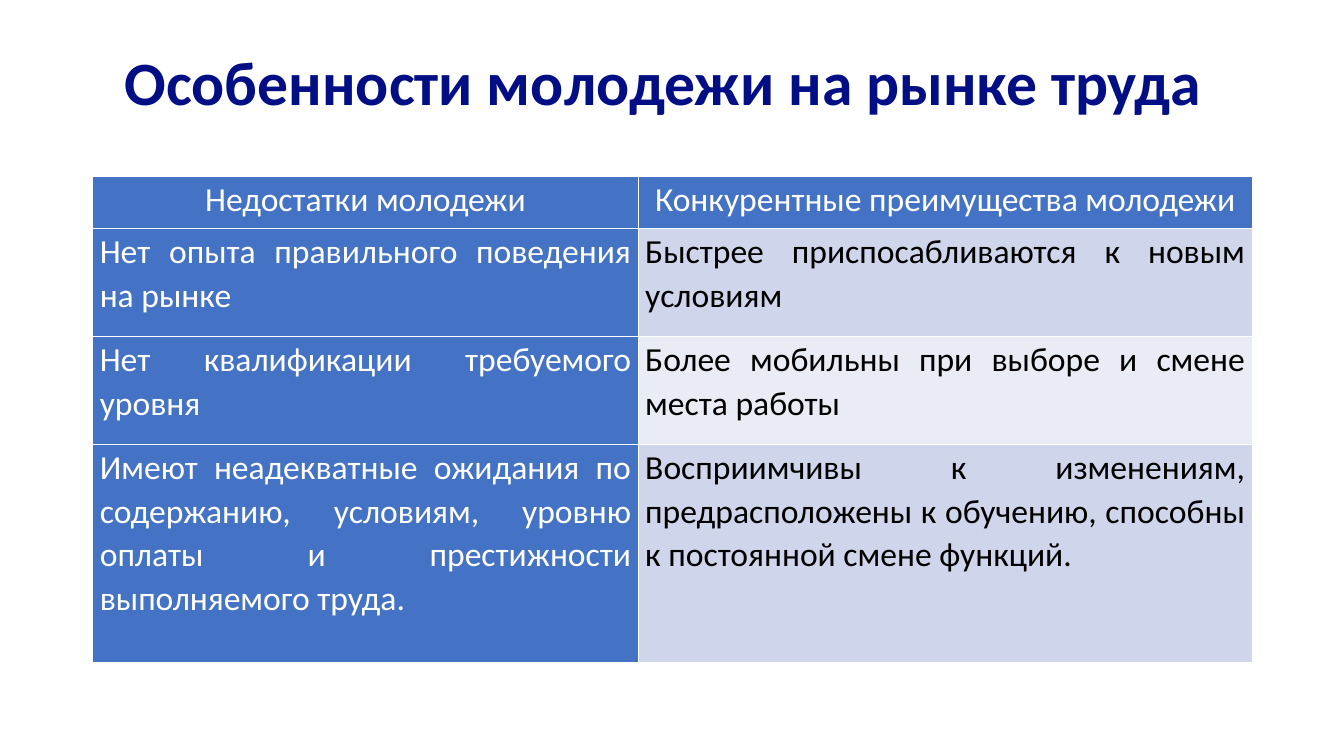
"""Build a slide comparing the weaknesses and strengths of young people on the labour market."""
from dataclasses import dataclass

from lxml.etree import SubElement
from pptx import Presentation
from pptx.dml.color import RGBColor
from pptx.enum.text import MSO_ANCHOR, PP_ALIGN
from pptx.oxml.ns import qn
from pptx.slide import Slide
from pptx.table import _Cell
from pptx.util import Inches, Pt


@dataclass(frozen=True)
class Theme:
    font: str = "Calibri"
    title_size: int = 44
    table_size: int = 24
    title: str = "020E84"
    accent: str = "4472C4"
    bands: tuple[str, str] = ("CFD5EA", "E9EBF5")
    light: str = "FFFFFF"
    dark: str = "000000"
    border_width: int = 1


@dataclass(frozen=True)
class Comparison:
    weakness: str
    strength: str
    height: float


THEME = Theme()
TITLE = "Особенности молодежи на рынке труда"
COLUMN_WIDTHS = (5.41, 6.09)
COMPARISONS = (
    Comparison("Недостатки молодежи", "Конкурентные преимущества молодежи", 0.52),
    Comparison("Нет опыта правильного поведения на рынке",
               "Быстрее приспосабливаются к новым условиям", 1.07),
    Comparison("Нет квалификации требуемого уровня",
               "Более мобильны при выборе и смене места работы", 1.07),
    Comparison("Имеют неадекватные ожидания по содержанию, условиям, уровню "
               "оплаты и престижности выполняемого труда.",
               "Восприимчивы к изменениям, предрасположены к обучению, "
               "способны к постоянной смене функций.", 2.16),
)


def add_title(slide: Slide) -> None:
    title = slide.shapes.title
    title.left, title.top = Inches(0.83), Inches(0.35)
    title.width, title.height = Inches(11.5), Inches(1)
    title.text_frame.text = TITLE
    title.text_frame.word_wrap = True
    title.text_frame.vertical_anchor = MSO_ANCHOR.MIDDLE
    paragraph = title.text_frame.paragraphs[0]
    paragraph.alignment = PP_ALIGN.CENTER
    paragraph.line_spacing = 0.9
    paragraph.font.name = THEME.font
    paragraph.font.size = Pt(THEME.title_size)
    paragraph.font.bold = True
    paragraph.font.color.rgb = RGBColor.from_string(THEME.title)


def add_borders(cell: _Cell) -> None:
    properties = cell._tc.get_or_add_tcPr()
    for side in ("a:lnL", "a:lnR", "a:lnT", "a:lnB"):
        line = SubElement(properties, qn(side), w=str(Pt(THEME.border_width)))
        fill = SubElement(line, qn("a:solidFill"))
        SubElement(fill, qn("a:srgbClr"), val=THEME.light)


def format_cell(cell: _Cell, text: str, fill: str, color: str, alignment: PP_ALIGN) -> None:
    cell.text = text
    cell.margin_left = cell.margin_right = Inches(0.07)
    cell.margin_top = cell.margin_bottom = 0
    add_borders(cell)
    cell.fill.solid()
    cell.fill.fore_color.rgb = RGBColor.from_string(fill)
    paragraph = cell.text_frame.paragraphs[0]
    paragraph.alignment = alignment
    paragraph.line_spacing = 1.07
    paragraph.font.name = THEME.font
    paragraph.font.size = Pt(THEME.table_size)
    paragraph.font.bold = False
    paragraph.font.color.rgb = RGBColor.from_string(color)


def add_comparison_table(slide: Slide) -> None:
    height = sum(comparison.height for comparison in COMPARISONS)
    table = slide.shapes.add_table(
        len(COMPARISONS), len(COLUMN_WIDTHS), Inches(0.92), Inches(1.75),
        Inches(sum(COLUMN_WIDTHS)), Inches(height)).table
    table.first_col = True
    for column, width in zip(table.columns, COLUMN_WIDTHS):
        column.width = Inches(width)
    for index, comparison in enumerate(COMPARISONS):
        table.rows[index].height = Inches(comparison.height)
        is_header = index == 0
        alignment = PP_ALIGN.CENTER if is_header else PP_ALIGN.JUSTIFY
        fill = THEME.accent if is_header else THEME.bands[(index - 1) % 2]
        color = THEME.light if is_header else THEME.dark
        format_cell(table.cell(index, 0), comparison.weakness, THEME.accent, THEME.light, alignment)
        format_cell(table.cell(index, 1), comparison.strength, fill, color, alignment)


def main() -> None:
    presentation = Presentation()
    presentation.slide_width, presentation.slide_height = Inches(13.33), Inches(7.5)
    slide = presentation.slides.add_slide(presentation.slide_layouts.get_by_name("Title Only"))
    add_title(slide)
    add_comparison_table(slide)
    presentation.save("out.pptx")


if __name__ == "__main__":
    main()
